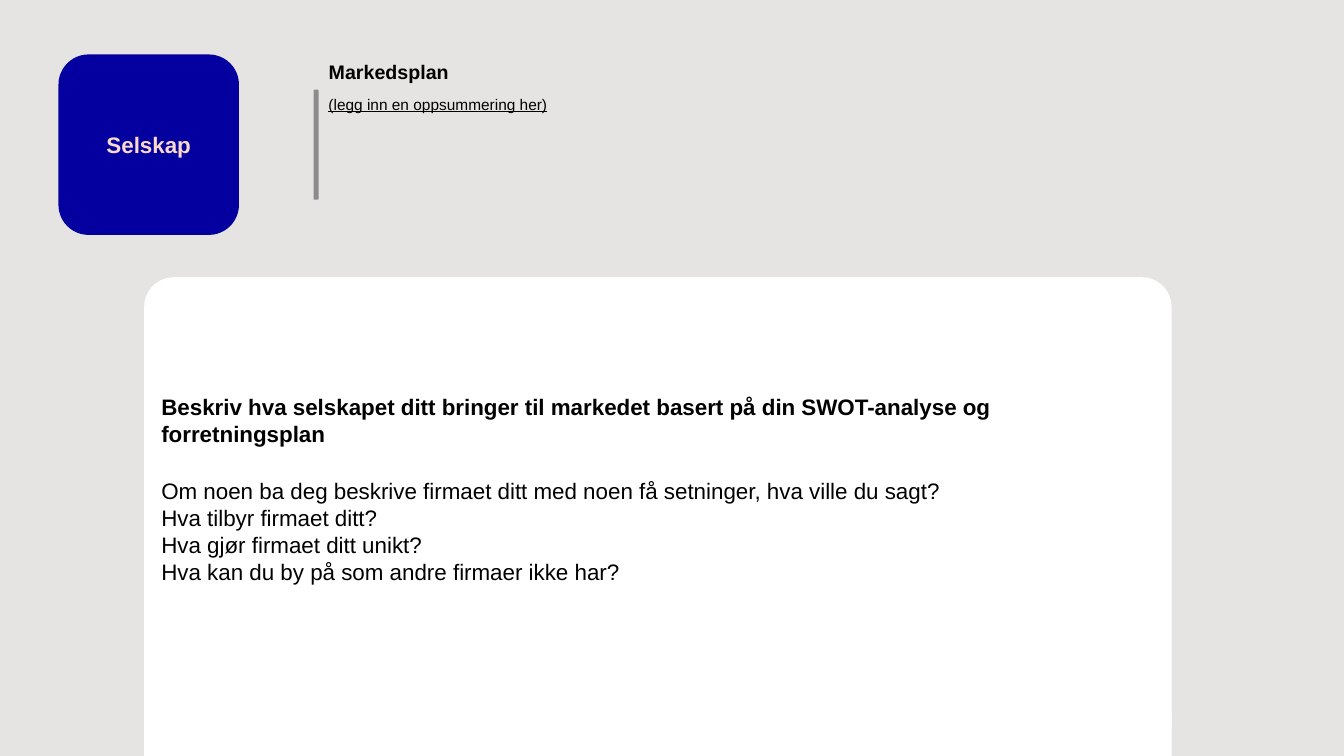
import pptx
import pptx.dml.color
import pptx.enum.shapes
import pptx.enum.text
import pptx.util
from lxml import etree

Inches, Pt = pptx.util.Inches, pptx.util.Pt
RGBColor = pptx.dml.color.RGBColor
MSO_SHAPE = pptx.enum.shapes.MSO_SHAPE
PP_ALIGN = pptx.enum.text.PP_ALIGN
MSO_ANCHOR = pptx.enum.text.MSO_ANCHOR
MSO_AUTO_SIZE = pptx.enum.text.MSO_AUTO_SIZE

GREY = RGBColor(0xE6, 0xE4, 0xE3)
WHITE = RGBColor(0xFF, 0xFF, 0xFF)
BLACK = RGBColor(0, 0, 0)
NAVY = RGBColor(0x03, 0x00, 0x9F)
PEACH = RGBColor(0xFB, 0xD9, 0xCA)
RULE = RGBColor(0x8B, 0x8A, 0x8D)

TITLE = "Markedsplan"
SUMMARY = "(legg inn en oppsummering her)"
COMPANY = "Selskap"
HEADING = ("Beskriv hva selskapet ditt bringer til markedet basert på din "
           "SWOT-analyse og forretningsplan")
QUESTIONS = [
    "Om noen ba deg beskrive firmaet ditt med noen få setninger, hva ville du sagt?",
    "Hva tilbyr firmaet ditt?",
    "Hva gjør firmaet ditt unikt?",
    "Hva kan du by på som andre firmaer ikke har?",
]

SLIDE_W, SLIDE_H = 13.33, 7.5
PANEL_X, PANEL_Y, PANEL_W = 1.43, 2.75, 10.19
BODY_H, FOOT_H = 4.2, 0.43
TEXT_X, TEXT_W = 3.16, 3.8


def place(sp, x, y, w, h):
    sp.left, sp.top, sp.width, sp.height = (Inches(v) for v in (x, y, w, h))


def add_block(s, kind, box, color, corner=None):
    sp = s.shapes.add_shape(kind, *(Inches(v) for v in box))
    sp.shadow.inherit = False
    sp.fill.solid()
    sp.fill.fore_color.rgb = color
    sp.line.fill.background()
    if corner is not None:
        sp.adjustments[0] = corner
    return sp


def write(tf, lines, anchor=MSO_ANCHOR.TOP, align=PP_ALIGN.LEFT, margin=0.1):
    """Fill a frame from (text, font values, points before) rows."""
    frame = {"word_wrap": True, "auto_size": MSO_AUTO_SIZE.NONE,
             "vertical_anchor": anchor, "margin_left": Inches(margin),
             "margin_right": Inches(margin)}
    for name, value in frame.items():
        setattr(tf, name, value)
    for i, (text, fmt, before) in enumerate(lines):
        p = tf.add_paragraph() if i else tf.paragraphs[0]
        p.alignment, p.space_before = align, Pt(before)
        r = p.add_run()
        r.text = text
        r.font.name = "Arial"
        for name, value in fmt.items():
            if name == "color":
                r.font.color.rgb = value
            else:
                setattr(r.font, name, value)


def remove_bullets(tf):
    for p in tf.paragraphs:
        pPr = p._p.get_or_add_pPr()
        pPr.set("marL", "0")
        pPr.set("indent", "0")
        etree.SubElement(pPr, pptx.oxml.ns.qn("a:buNone"))


def main():
    prs = pptx.Presentation()
    prs.slide_width, prs.slide_height = Inches(SLIDE_W), Inches(SLIDE_H)
    s = prs.slides.add_slide(prs.slide_layouts[1])
    s.background.fill.solid()
    s.background.fill.fore_color.rgb = GREY
    title, body = s.shapes.title, s.placeholders[1]

    panel = add_block(s, MSO_SHAPE.ROUNDED_RECTANGLE,
                      (PANEL_X, PANEL_Y, PANEL_W, SLIDE_H - PANEL_Y), WHITE, 0.062)
    add_block(s, MSO_SHAPE.RECTANGLE,
              (PANEL_X, SLIDE_H - FOOT_H, PANEL_W, FOOT_H), WHITE)
    add_block(s, MSO_SHAPE.ROUNDED_RECTANGLE, (3.11, 0.89, 0.05, 1.09), RULE)
    company = add_block(s, MSO_SHAPE.ROUNDED_RECTANGLE,
                        (0.58, 0.54, 1.79, 1.79), NAVY)
    write(company.text_frame,
          [(COMPANY, {"size": Pt(16), "bold": True, "color": PEACH}, 0)],
          MSO_ANCHOR.MIDDLE, PP_ALIGN.CENTER, 0)

    place(title, TEXT_X, 0.54, TEXT_W, 0.34)
    write(title.text_frame,
          [(TITLE, {"size": Pt(14), "bold": True, "color": BLACK}, 0)])
    summary = s.shapes.add_textbox(Inches(TEXT_X), Inches(0.89),
                                   Inches(TEXT_W), Inches(0.29))
    write(summary.text_frame,
          [(SUMMARY, {"size": Pt(11), "underline": True, "color": BLACK}, 0)])

    place(body, PANEL_X, PANEL_Y, PANEL_W, BODY_H)
    panel.element.addnext(body.element)  # text in front of the panel
    plain = {"size": Pt(16), "bold": False, "color": BLACK}
    rows = [(HEADING, {**plain, "bold": True}, 0)]
    rows += [(q, plain, 0 if i else 22) for i, q in enumerate(QUESTIONS)]
    write(body.text_frame, rows, MSO_ANCHOR.MIDDLE, margin=0.17)
    remove_bullets(body.text_frame)

    prs.save("out.pptx")


if __name__ == "__main__":
    main()
